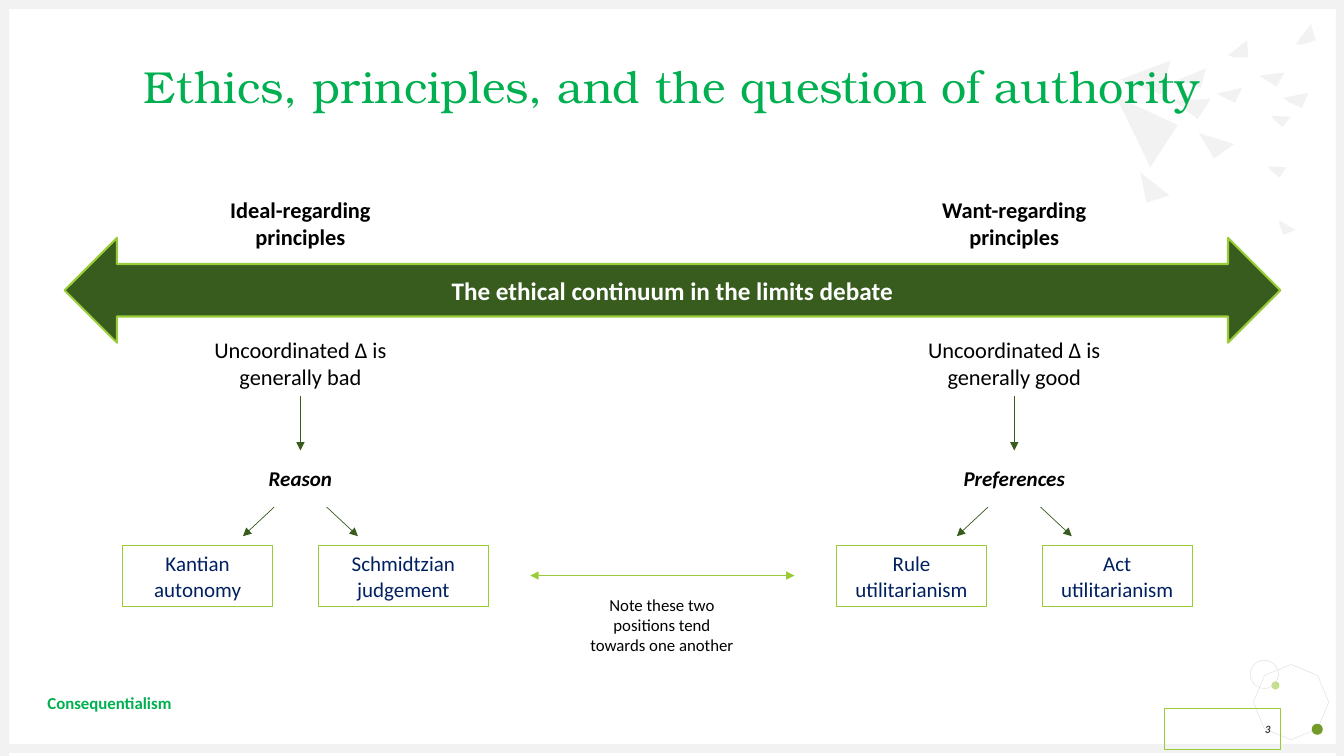
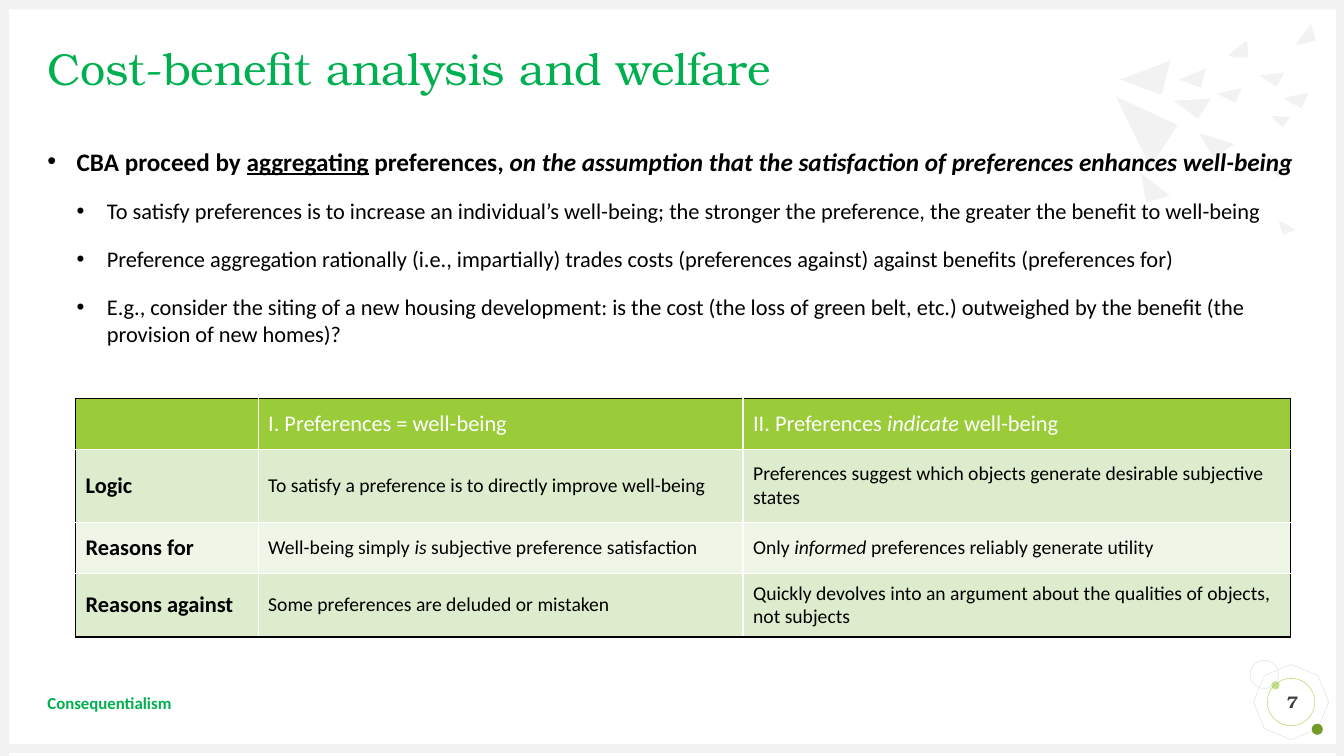
import pptx
import pptx.dml.color
import pptx.enum.shapes
import pptx.enum.text
import pptx.oxml.ns
import pptx.util
from lxml import etree

Inches = pptx.util.Inches
Pt = pptx.util.Pt
qn = pptx.oxml.ns.qn
SHAPE = pptx.enum.shapes.MSO_SHAPE
STRAIGHT = pptx.enum.shapes.MSO_CONNECTOR.STRAIGHT
ALIGN = pptx.enum.text.PP_ALIGN
MIDDLE = pptx.enum.text.MSO_ANCHOR.MIDDLE

BRIGHT, DARK, LIME = "00B050", "375C1E", "9ACB39"
GREY, PALE, BLACK, WHITE = "D9D9D9", "F2F2F2", "000000", "FFFFFF"
NAVY, CHARCOAL = "002060", "404040"
BANDS = ["DEECCE", "EFF6E8"]
SANS, SERIF = "Calibri", "TeX Gyre Bonum"

FRAME_BARS = [(0, 7.38, 13.33, 0.09), (0, 0, 13.33, 0.09),
              (0, 0, 0.09, 7.5), (13.25, 0, 0.09, 7.5)]
SHARDS = [
    [(11.61, 0.6), (11.52, 0.94), (11.11, 0.79)],
    [(12.01, 0.98), (11.88, 1.18), (11.64, 1)],
    [(11.96, 0.68), (11.91, 0.87), (11.69, 0.79)],
    [(12.32, 0.87), (12.25, 1.02), (12.07, 0.93)],
    [(12.37, 0.4), (12.38, 0.57), (12.24, 0.57), (12.18, 0.55)],
    [(12.8, 1.16), (12.72, 1.26), (12.64, 1.19), (12.61, 1.15)],
    [(13, 0.24), (13.05, 0.4), (12.92, 0.44), (12.85, 0.44)],
    [(12.74, 0.72), (12.66, 0.86), (12.49, 0.75)],
    [(12.98, 0.92), (12.91, 1.07), (12.78, 1.01), (12.73, 0.97)],
    [(11.68, 1.24), (11.41, 1.66), (11.07, 0.96)],
    [(12.24, 1.43), (12.04, 1.57), (11.89, 1.32)],
    [(12.76, 1.66), (12.69, 1.76), (12.6, 1.69), (12.58, 1.65)],
    [(11.6, 1.94), (11.37, 2.01), (11.31, 1.71)],
    [(12.85, 2.28), (12.73, 2.33), (12.69, 2.23), (12.69, 2.19)],
]


def rgb(color):
    return pptx.dml.color.RGBColor.from_string(color)


def write(para, text, size, color=BLACK, style="", font=SANS, align=None):
    """Fill a paragraph; text is a string or (string, style letters from "biu") pairs."""
    spans = [(text, style)] if isinstance(text, str) else text
    if align is not None:
        para.alignment = align
    for words, letters in spans:
        span = para.add_run()
        span.text = words
        span.font.name = font
        span.font.size = Pt(size)
        span.font.color.rgb = rgb(color)
        span.font.bold = "b" in letters
        span.font.italic = "i" in letters
        span.font.underline = "u" in letters


def paint(shape, fill=None, line=None, width=0.25):
    shape.shadow.inherit = False
    if fill:
        shape.fill.solid()
        shape.fill.fore_color.rgb = rgb(fill)
    else:
        shape.fill.background()
    if line:
        shape.line.color.rgb = rgb(line)
        shape.line.width = Pt(width)
    else:
        shape.line.fill.background()


def border(cell, colors):
    """Draw 1 pt borders; colors go left, right, top, bottom."""
    properties = cell._tc.get_or_add_tcPr()
    for side, color in zip("LRTB", colors):
        line = etree.SubElement(properties, qn(f"a:ln{side}"), w=str(Pt(1)))
        solid = etree.SubElement(line, qn("a:solidFill"))
        etree.SubElement(solid, qn("a:srgbClr"), val=color)


class Slides:
    def __init__(self):
        self.deck = pptx.Presentation()
        self.deck.slide_width, self.deck.slide_height = Inches(13.33), Inches(7.5)
        self.page = None

    def start(self, layout, title, at, align):
        first = self.page is None
        self.page = self.deck.slides.add_slide(self.deck.slide_layouts[layout])
        if first:
            self.decorate_master()
        frame = self.fit_placeholder(self.page.shapes.title, at)
        para = frame.paragraphs[0]
        para.line_spacing = 0.9
        write(para, title, 32, BRIGHT, font=SERIF, align=align)

    def decorate_master(self):
        """Draw the shared decoration and move it to the slide master."""
        ornaments = [
            self.shape(SHAPE.OCTAGON, (12.46, 6.62, 0.69, 0.69), line=GREY),
            self.shape(SHAPE.OVAL, (12.61, 6.76, 0.08, 0.08), "C2E088"),
            self.shape(SHAPE.OVAL, (13.01, 7.18, 0.11, 0.11), "749A29"),
            self.shape(SHAPE.OVAL, (12.4, 6.55, 0.28, 0.28), line=GREY),
        ]
        ornaments[0].rotation = 22.7
        ornaments += [self.shape(SHAPE.RECTANGLE, bar, PALE) for bar in FRAME_BARS]
        ornaments += [self.outline(points, PALE) for points in SHARDS]
        tree = self.deck.slide_master.shapes.element
        for number, ornament in enumerate(ornaments, 100):
            ornament.element.xpath(".//p:cNvPr")[0].set("id", str(number))
            tree.append(ornament.element)

    def fit_placeholder(self, holder, at):
        holder.left, holder.top, holder.width, holder.height = map(Inches, at)
        frame = holder.text_frame
        frame.auto_size = pptx.enum.text.MSO_AUTO_SIZE.NONE
        self.flush(frame)
        return frame

    def flush(self, frame):
        """Centre the text vertically and remove the insets."""
        frame.vertical_anchor = MIDDLE
        frame.margin_left = frame.margin_right = 0
        frame.margin_top = frame.margin_bottom = 0

    def shape(self, kind, at, fill=None, line=None, width=0.25):
        shape = self.page.shapes.add_shape(kind, *map(Inches, at))
        paint(shape, fill, line, width)
        shape.text_frame.word_wrap = True
        return shape

    def outline(self, points, fill):
        corners = [(Inches(x), Inches(y)) for x, y in points]
        builder = self.page.shapes.build_freeform(*corners[0])
        builder.add_line_segments(corners[1:], close=True)
        shape = builder.convert_to_shape()
        paint(shape, fill)
        return shape

    def text(self, at, text, size, color=BLACK, style="", align=ALIGN.CENTER):
        box = self.page.shapes.add_textbox(*map(Inches, at))
        box.text_frame.word_wrap = True
        write(box.text_frame.paragraphs[0], text, size, color, style, align=align)
        return box

    def arrow(self, start, end, color=DARK, both=False):
        connector = self.page.shapes.add_connector(STRAIGHT, *map(Inches, start + end))
        connector.line.color.rgb = rgb(color)
        connector.line.width = Pt(0.5)
        properties = connector.element.spPr
        line = properties.find(qn("a:ln"))
        for name in ["headEnd", "tailEnd"] if both else ["tailEnd"]:
            etree.SubElement(line, qn(f"a:{name}"), type="triangle")
        etree.SubElement(properties, qn("a:effectLst"))
        return connector

    def footer(self):
        box = self.text((0.47, 6.77, 9.61, 0.4), "Consequentialism", 12, BRIGHT, "b",
                        ALIGN.LEFT)
        self.flush(box.text_frame)

    def bullets(self, at, items):
        """Fill the body placeholder; items are (level, text, size) rows."""
        frame = self.fit_placeholder(self.page.placeholders[1], at)
        for index, (level, text, size) in enumerate(items):
            para = frame.add_paragraph() if index else frame.paragraphs[0]
            para.level = level
            para.space_before = Pt(15 if index else 0)
            properties = para._p.get_or_add_pPr()
            properties.set("marL", str(Inches([0.29, 0.59][level])))
            properties.set("indent", str(Inches([-0.29, -0.3][level])))
            etree.SubElement(properties, qn("a:buChar"), char="•")
            write(para, text, size, align=ALIGN.LEFT)

    def table(self, at, widths, heights, rows):
        last_row, last_column = len(rows) - 1, len(widths) - 1
        frame = self.page.shapes.add_table(len(rows), len(widths), *map(Inches, at))
        table = frame.table
        for column, width in zip(table.columns, widths):
            column.width = Inches(width)
        for r, (row, height) in enumerate(zip(rows, heights)):
            table.rows[r].height = Inches(height)
            for c, text in enumerate(row):
                cell = table.cell(r, c)
                edges = [c == 0, c == last_column, r == 0, r == last_row]
                border(cell, [BLACK if edge else WHITE for edge in edges])
                cell.fill.solid()
                cell.fill.fore_color.rgb = rgb(BANDS[(r - 1) % 2] if r else LIME)
                cell.vertical_anchor = MIDDLE
                if text:
                    write(cell.text_frame.paragraphs[0], text,
                          16 if r == 0 or c == 0 else 14,
                          BLACK if r else WHITE, "b" if c == 0 else "")


def continuum_slide(slides):
    slides.start(5, "Ethics, principles, and the question of authority",
                 (0.64, 0.56, 12.06, 0.64), ALIGN.CENTER)
    band = slides.shape(SHAPE.LEFT_RIGHT_ARROW, (0.64, 2.36, 12.06, 1.04), DARK, LIME, 1.5)
    write(band.text_frame.paragraphs[0], "The ethical continuum in the limits debate",
          18, WHITE, "b", align=ALIGN.CENTER)

    sides = [
        (2.98, "Ideal-regarding principles", "Uncoordinated Δ is generally bad", "Reason",
         [("Kantian autonomy", 1.49), ("Schmidtzian judgement", 1.69)]),
        (10.06, "Want-regarding principles", "Uncoordinated Δ is generally good",
         "Preferences", [("Rule utilitarianism", 1.49), ("Act utilitarianism", 1.49)]),
    ]
    for center, principles, verdict, basis, theories in sides:
        slides.text((center - 1.08, 1.9, 2.16, 0.64), principles, 16, style="b")
        verdict_box = slides.text((center - 1.03, 3.29, 2.06, 0.64), verdict, 16)
        slides.arrow((center, 3.93), (center, 4.47)).begin_connect(verdict_box, 2)
        slides.text((center - 1.03, 4.57, 2.06, 0.35), basis, 15, style="bi")
        for sign, (theory, width) in zip((-1, 1), theories):
            slides.arrow((center + sign * 0.26, 5.03), (center + sign * 0.57, 5.32))
            left = center + sign * 1.02 - width / 2
            box = slides.shape(SHAPE.RECTANGLE, (left, 5.41, width, 0.61),
                               line=LIME, width=0.75)
            write(box.text_frame.paragraphs[0], theory, 15, NAVY, align=ALIGN.CENTER)

    slides.arrow((5.26, 5.71), (7.88, 5.71), LIME, both=True)
    slides.text((5.72, 5.85, 1.69, 0.71),
                "Note these two positions tend towards one another", 12)
    number = slides.shape(SHAPE.RECTANGLE, (11.55, 7.03, 1.15, 0.4), line=LIME)
    write(number.text_frame.paragraphs[0], "3", 8, CHARCOAL, "bi", align=ALIGN.RIGHT)
    slides.footer()


def welfare_slide(slides):
    slides.start(1, "Cost-benefit analysis and welfare", (0.47, 0.47, 12.4, 0.47),
                 ALIGN.LEFT)
    slides.bullets((0.47, 1.26, 12.4, 2.37), [
        (0, [("CBA proceed by ", "b"), ("aggregating", "bu"), (" preferences, ", "b"),
             ("on the assumption that the satisfaction of preferences enhances "
              "well-being", "bi")], 18),
        (1, "To satisfy preferences is to increase an individual’s well-being; the "
            "stronger the preference, the greater the benefit to well-being", 16),
        (1, "Preference aggregation rationally (i.e., impartially) trades costs "
            "(preferences against) against benefits (preferences for)", 16),
        (1, "E.g., consider the siting of a new housing development: is the cost (the "
            "loss of green belt, etc.) outweighed by the benefit (the provision of new "
            "homes)?", 16),
    ])
    slides.table((0.75, 3.95, 12.05, 2.37), [1.81, 4.81, 5.43], [0.51, 0.72, 0.51, 0.63], [
        ["", "I. Preferences = well-being",
         [("II. Preferences ", ""), ("indicate ", "i"), ("well-being", "")]],
        ["Logic", "To satisfy a preference is to directly improve well-being",
         "Preferences suggest which objects generate desirable subjective states"],
        ["Reasons for",
         [("Well-being simply ", ""), ("is ", "i"),
          ("subjective preference satisfaction", "")],
         [("Only ", ""), ("informed ", "i"),
          ("preferences reliably generate utility", "")]],
        ["Reasons against", "Some preferences are deluded or mistaken",
         "Quickly devolves into an argument about the qualities of objects, not subjects"],
    ])
    slides.footer()
    number = slides.shape(SHAPE.OVAL, (12.57, 6.73, 0.47, 0.47), line=LIME)
    slides.flush(number.text_frame)
    write(number.text_frame.paragraphs[0], "7", 12, CHARCOAL, "bi", SERIF, ALIGN.CENTER)


def main():
    slides = Slides()
    continuum_slide(slides)
    welfare_slide(slides)
    slides.deck.save("out.pptx")


if __name__ == "__main__":
    main()
